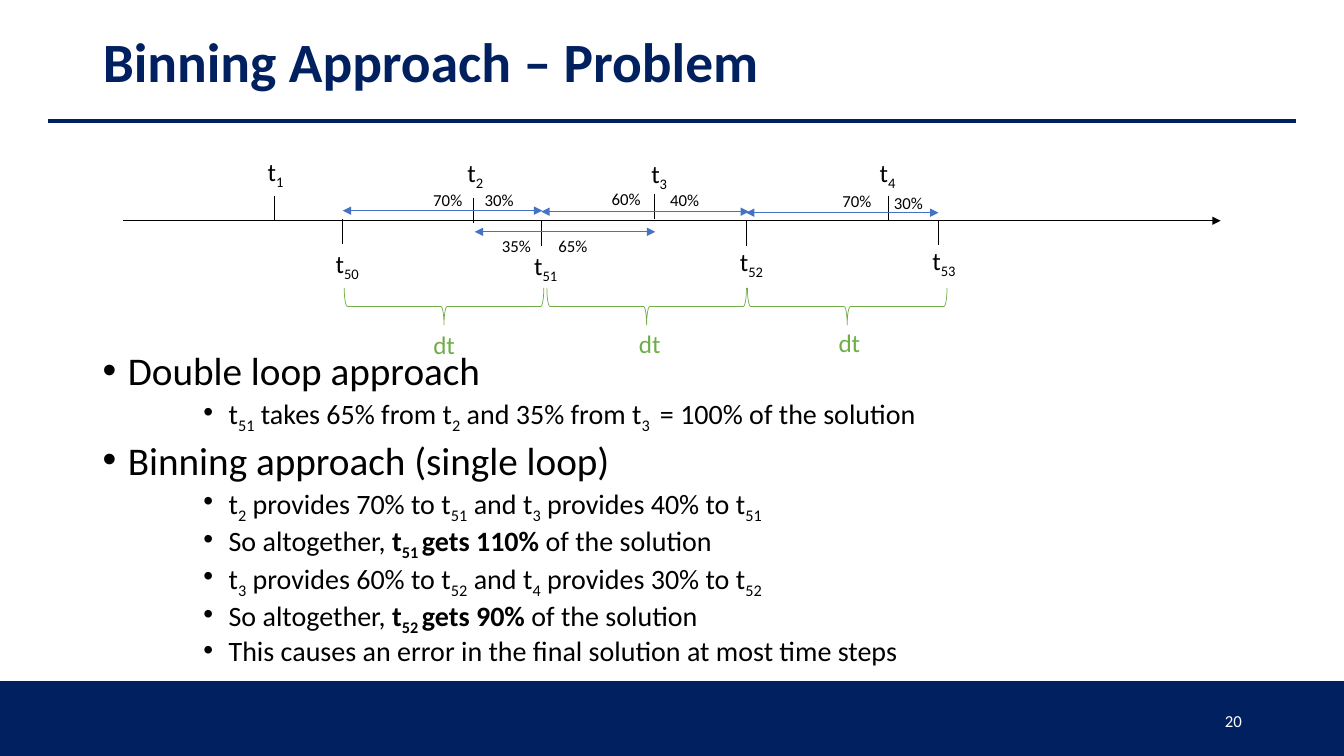
import pptx
import pptx.util
import pptx.dml.color
import pptx.enum.shapes
import pptx.enum.text
import pptx.oxml
import pptx.oxml.ns
from lxml import etree

ALIGN = pptx.enum.text.PP_ALIGN
ANCHOR = pptx.enum.text.MSO_ANCHOR
SHAPE = pptx.enum.shapes.MSO_SHAPE
NAVY, BLACK, WHITE, BLUE, GREEN = "002060", "000000", "FFFFFF", "4472C4", "70AD47"


def color(hex_string):
    return pptx.dml.color.RGBColor.from_string(hex_string)


def add_xml(parent, tag, **attrs):
    el = etree.SubElement(parent, pptx.oxml.ns.qn(tag))
    for key, value in attrs.items():
        el.set(key, value)


class Deck:
    """Places elements on a grid whose cells are a tenth of an inch square."""
    font = "Calibri"
    cell = 0.1

    def __init__(self, cols, rows):
        self.prs = pptx.Presentation()
        self.prs.slide_width = self.grid(cols)
        self.prs.slide_height = self.grid(rows)
        self.slide = self.prs.slides.add_slide(self.prs.slide_layouts[5])

    def grid(self, cells):
        return pptx.util.Inches(cells * self.cell)

    def style(self, p, size, hex_string, bold=None, align=None):
        p.font.name, p.font.size, p.font.bold = self.font, pptx.util.Pt(size), bold
        p.font.color.rgb = color(hex_string)
        p.alignment = align

    def runs(self, p, text):
        """Between asterisks text is bold, between tildes it is subscript."""
        for i, part in enumerate(text.split("*")):
            for j, piece in enumerate(part.split("~")):
                if piece:
                    r = p.add_run()
                    r.text = piece
                    if i % 2:
                        r.font.bold = True
                    if j % 2:
                        r._r.get_or_add_rPr().set("baseline", "-25000")

    def title(self, text, *box):
        sp = self.slide.shapes.title
        sp.left, sp.top, sp.width, sp.height = map(self.grid, box)
        tf = sp.text_frame
        tf.text = text
        tf.vertical_anchor = ANCHOR.MIDDLE
        p = tf.paragraphs[0]
        p.line_spacing = 0.9
        self.style(p, 39.6, NAVY, True, ALIGN.LEFT)

    def text(self, text, *box, size=12, fill=BLACK, align=None, anchor=ANCHOR.TOP):
        tf = self.slide.shapes.add_textbox(*map(self.grid, box)).text_frame
        tf.word_wrap = False
        tf.vertical_anchor = anchor
        self.runs(tf.paragraphs[0], text)
        self.style(tf.paragraphs[0], size, fill, align=align)

    def bullets(self, items, *box):
        tf = self.slide.shapes.add_textbox(*map(self.grid, box)).text_frame
        tf.word_wrap = True
        for i, (level, text) in enumerate(items):
            p = tf.add_paragraph() if i else tf.paragraphs[0]
            p.level = level
            p.line_spacing = 0.8
            p.space_before = pptx.util.Pt((5 if level else 10) if i else 0)
            pPr = p._p.get_or_add_pPr()
            pPr.set("marL", str(self.grid(12.5 if level else 2.5)))
            pPr.set("indent", str(-self.grid(2.5)))
            add_xml(pPr, "a:buFont", typeface="Arial")
            add_xml(pPr, "a:buChar", char="•")
            self.runs(p, text)
            self.style(p, 20 if level else 28, BLACK)

    def line(self, x1, y1, x2, y2, hex_string=BLACK, width=0.5, ends=()):
        cn = self.slide.shapes.add_connector(
            pptx.enum.shapes.MSO_CONNECTOR.STRAIGHT, *map(self.grid, (x1, y1, x2, y2)))
        cn.line.color.rgb = color(hex_string)
        cn.line.width = pptx.util.Pt(width)
        for end in ends:
            add_xml(cn.line._get_or_add_ln(), "a:" + end, type="triangle")
        add_xml(cn._element.spPr, "a:effectLst")

    def shape(self, kind, *box, fill=None, line=BLACK, width=1, rotation=0):
        sp = self.slide.shapes.add_shape(kind, *map(self.grid, box))
        sp.shadow.inherit = False
        sp.rotation = rotation
        if fill:
            sp.fill.solid()
            sp.fill.fore_color.rgb = color(fill)
        else:
            sp.fill.background()
        sp.line.color.rgb = color(line)
        sp.line.width = pptx.util.Pt(width)


def main():
    deck = Deck(133.33, 75)

    # Title, rule and footer
    deck.shape(SHAPE.RECTANGLE, 0, 67.6, 133.33, 7.4, fill=NAVY, line=NAVY)
    deck.line(4.8, 12, 128.6, 12, NAVY, 3)
    deck.title("Binning Approach – Problem", 9.2, 2.7, 115, 7.5)
    deck.text("20", 94.2, 69.5, 30, 4, fill=WHITE, align=ALIGN.RIGHT, anchor=ANCHOR.MIDDLE)

    # Explanation
    deck.bullets([
        (0, "Double loop approach"),
        (2, "t~51~ takes 65% from t~2~ and 35% from t~3 ~ = 100% of the solution"),
        (0, "Binning approach (single loop)"),
        (2, "t~2~ provides 70% to t~51~ and t~3~ provides 40% to t~51~"),
        (2, "So altogether, *t~51 ~gets 110% *of the solution"),
        (2, "t~3~ provides 60% to t~52~ and t~4~ provides 30% to t~52~"),
        (2, "So altogether, *t~52 ~gets 90% *of the solution"),
        (2, "This causes an error in the final solution at most time steps"),
    ], 9.2, 34.8, 115, 31.9)

    # Time axis
    deck.line(12.2, 21.9, 121.1, 21.9, ends=["tailEnd"])

    # Time steps: index, tick column and row, label centre and row
    for index, x, y, label_x, label_y in [
            (1, 27.2, 19.4, 27.35, 15), (2, 47, 19.6, 47.15, 15.1),
            (3, 64.9, 19.2, 65.4, 15.2), (4, 88.1, 19.4, 88.05, 15.1),
            (50, 34, 21.7, 34.45, 24.1), (51, 53.7, 21.9, 54.15, 24.3),
            (52, 74, 21.9, 74.55, 23.9), (53, 93.1, 21.8, 93.65, 23.8)]:
        deck.line(x, y, x, y + 2.55)
        deck.text(f"t~{index}~", label_x - 3.15, label_y, 6.3, 4, size=18, align=ALIGN.CENTER)

    # Bins of width dt: brace column, label column and row
    for x, label_x, label_y in [(42.2, 42, 32.2), (62.3, 62.4, 32.1), (82.2, 82.2, 32)]:
        deck.shape(SHAPE.LEFT_BRACE, x, 20.5, 3.7, 19.8, line=GREEN, width=0.5, rotation=270)
        deck.text("dt", label_x, label_y, 5.1, 4, size=18, fill=GREEN)

    # Spans between time steps
    for x1, x2, y in [(47.1, 65, 23), (34, 53.8, 20.9), (53.7, 74.3, 21), (74, 93.1, 21.1)]:
        deck.line(x1, y, x2, y, BLUE, ends=["headEnd", "tailEnd"])

    # Shares of each span
    for share, x, y in [
            (35, 48.8, 22.9), (65, 54.4, 22.9), (70, 42, 18.3), (30, 47.1, 18.3),
            (60, 59.7, 18.2), (40, 65.5, 18.3), (70, 82.6, 18.4), (30, 87.7, 18.6)]:
        deck.text(f"{share}%", x, y, 5, 3)

    deck.prs.save("out.pptx")


if __name__ == "__main__":
    main()
